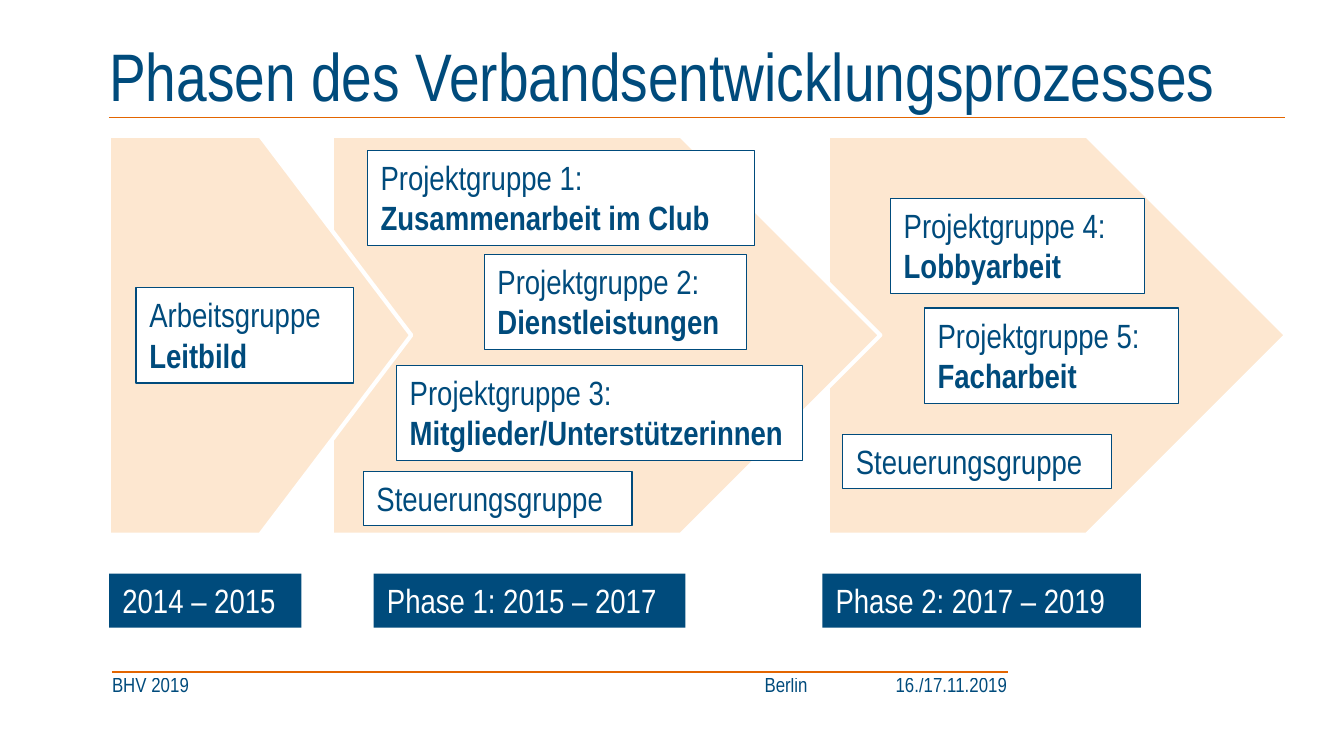
from dataclasses import dataclass

from pptx import Presentation
from pptx.dml.color import RGBColor
from pptx.enum.shapes import MSO_CONNECTOR, MSO_SHAPE
from pptx.enum.text import MSO_ANCHOR, MSO_AUTO_SIZE, PP_ALIGN
from pptx.oxml.ns import qn
from pptx.util import Pt
from lxml import etree

LINE = MSO_CONNECTOR.STRAIGHT
RECT, ARROW = MSO_SHAPE.RECTANGLE, MSO_SHAPE.PENTAGON
TOP, MIDDLE = MSO_ANCHOR.TOP, MSO_ANCHOR.MIDDLE
LEFT, CENTER, RIGHT = PP_ALIGN.LEFT, PP_ALIGN.CENTER, PP_ALIGN.RIGHT
GROW = MSO_AUTO_SIZE.SHAPE_TO_FIT_TEXT
NO_INSETS = dict.fromkeys(
    ("margin_left", "margin_top", "margin_right", "margin_bottom"), 0)

FONT = "Arial Narrow"
BLUE, ORANGE, PEACH, WHITE = "004B7C", "E36500", "FDE7D0", "FFFFFF"
ARROW_TOP, ARROW_H = 72.7, 213.8
ONE_LINE, TWO_LINES = 28.9, 51.1
PHASE_TOP = 307.4


@dataclass
class Arrow:
    x: float
    w: float


@dataclass
class Group:
    x: float
    y: float
    w: float
    head: str
    topic: str = ""


@dataclass
class Phase:
    x: float
    w: float
    label: str


@dataclass
class FooterCell:
    w: float
    text: str = ""
    align: PP_ALIGN = LEFT


# Right to left, so that each tip overlaps the next arrow
ARROWS = [Arrow(443.5, 245.5), Arrow(177.8, 293.8), Arrow(58.3, 162)]
GROUPS = [
    Group(72.9, 154.1, 116.6, "Arbeitsgruppe", "Leitbild"),
    Group(196.8, 80.6, 207.4, "Projektgruppe 1:", "Zusammenarbeit im Club"),
    Group(259.4, 136.3, 140.4, "Projektgruppe 2:", "Dienstleistungen"),
    Group(212.4, 195.8, 217.4, "Projektgruppe 3:", "Mitglieder/Unterstützerinnen"),
    Group(194.6, 252.7, 144, "Steuerungsgruppe"),
    Group(477, 106.3, 136.1, "Projektgruppe 4:", "Lobbyarbeit"),
    Group(451.4, 232.8, 144, "Steuerungsgruppe"),
    Group(495.2, 165.1, 136.1, "Projektgruppe 5:", "Facharbeit"),
]
PHASES = [
    Phase(58.5, 103, "2014 – 2015"),
    Phase(200.2, 167, "Phase 1: 2015 – 2017"),
    Phase(440.6, 170.6, "Phase 2: 2017 – 2019"),
]
FOOTER = [
    FooterCell(311.8, "BHV 2019"),
    FooterCell(28.1),
    FooterCell(42.5, "Berlin", CENTER),
    FooterCell(2.1),
    FooterCell(94.3, "16./17.11.2019", RIGHT),
]


def rgb(value: str) -> RGBColor:
    return RGBColor.from_string(value)


def apply(target, values: dict) -> None:
    for name, value in values.items():
        setattr(target, name, value)


def add_run(p, text: str, size: float, color: str, bold: bool = False) -> None:
    r = p.add_run()
    r.text = text
    apply(r.font, {"name": FONT, "size": Pt(size), "bold": bold})
    r.font.color.rgb = rgb(color)


def add_rule(s, x1: float, x2: float, y: float) -> None:
    sp = s.shapes.add_connector(LINE, Pt(x1), Pt(y), Pt(x2), Pt(y))
    sp.line.color.rgb = rgb(ORANGE)
    sp.line.width = Pt(0.75)
    etree.SubElement(sp._element.spPr, qn("a:effectLst"))


def add_block(s, kind, box: tuple, fill: str, line: str = "", width: float = 0.75):
    sp = s.shapes.add_shape(kind, *map(Pt, box))
    sp.shadow.inherit = False
    sp.fill.solid()
    sp.fill.fore_color.rgb = rgb(fill)
    if line:
        sp.line.color.rgb = rgb(line)
        sp.line.width = Pt(width)
    else:
        sp.line.fill.background()
    return sp


def add_label(sp, color: str, head: str, topic: str = "") -> None:
    tf = sp.text_frame
    apply(tf, {"word_wrap": True, "auto_size": GROW, "vertical_anchor": TOP})
    p = tf.paragraphs[0]
    p.alignment = LEFT
    add_run(p, head, 18, color)
    if topic:
        p.add_line_break()
        add_run(p, topic, 18, color, bold=True)


def add_title(s, text: str) -> None:
    tf = s.shapes.add_textbox(Pt(58.5), Pt(22), Pt(648), Pt(43.2)).text_frame
    apply(tf, {"word_wrap": False, "vertical_anchor": MIDDLE, **NO_INSETS})
    p = tf.paragraphs[0]
    apply(p, {"alignment": LEFT, "line_spacing": Pt(36)})
    add_run(p, text, 36, BLUE)


def add_footer(s, cells: list[FooterCell]) -> None:
    total = sum(c.w for c in cells)
    table = s.shapes.add_table(
        1, len(cells), Pt(60), Pt(362.8), Pt(total), Pt(13)).table
    apply(table, {"first_row": False, "horz_banding": False})
    for i, item in enumerate(cells):
        table.columns[i].width = Pt(item.w)
        cell = table.cell(0, i)
        apply(cell, {"vertical_anchor": TOP, **NO_INSETS})
        cell.fill.background()
        p = cell.text_frame.paragraphs[0]
        p.alignment = item.align
        if item.text:
            add_run(p, item.text, 11, BLUE)
        else:
            # Keeps empty cells from stretching the row
            etree.SubElement(p._p, qn("a:endParaRPr"), sz="1100")


def main() -> None:
    prs = Presentation()
    prs.slide_width, prs.slide_height = Pt(720), Pt(405)
    s = prs.slides.add_slide(prs.slide_layouts[6])

    # Title and footer
    add_rule(s, 60, 540, 360)
    add_rule(s, 58.3, 688.3, 63.1)
    add_footer(s, FOOTER)
    add_title(s, "Phasen des Verbandsentwicklungsprozesses")

    # Process arrows
    for a in ARROWS:
        add_block(s, ARROW, (a.x, ARROW_TOP, a.w, ARROW_H), PEACH, WHITE, 2.25)

    # Working groups
    for g in GROUPS:
        h = TWO_LINES if g.topic else ONE_LINE
        sp = add_block(s, RECT, (g.x, g.y, g.w, h), WHITE, BLUE)
        add_label(sp, BLUE, g.head, g.topic)

    # Phase dates
    for ph in PHASES:
        sp = add_block(s, RECT, (ph.x, PHASE_TOP, ph.w, ONE_LINE), BLUE)
        add_label(sp, WHITE, ph.label)

    prs.save("out.pptx")


if __name__ == "__main__":
    main()
